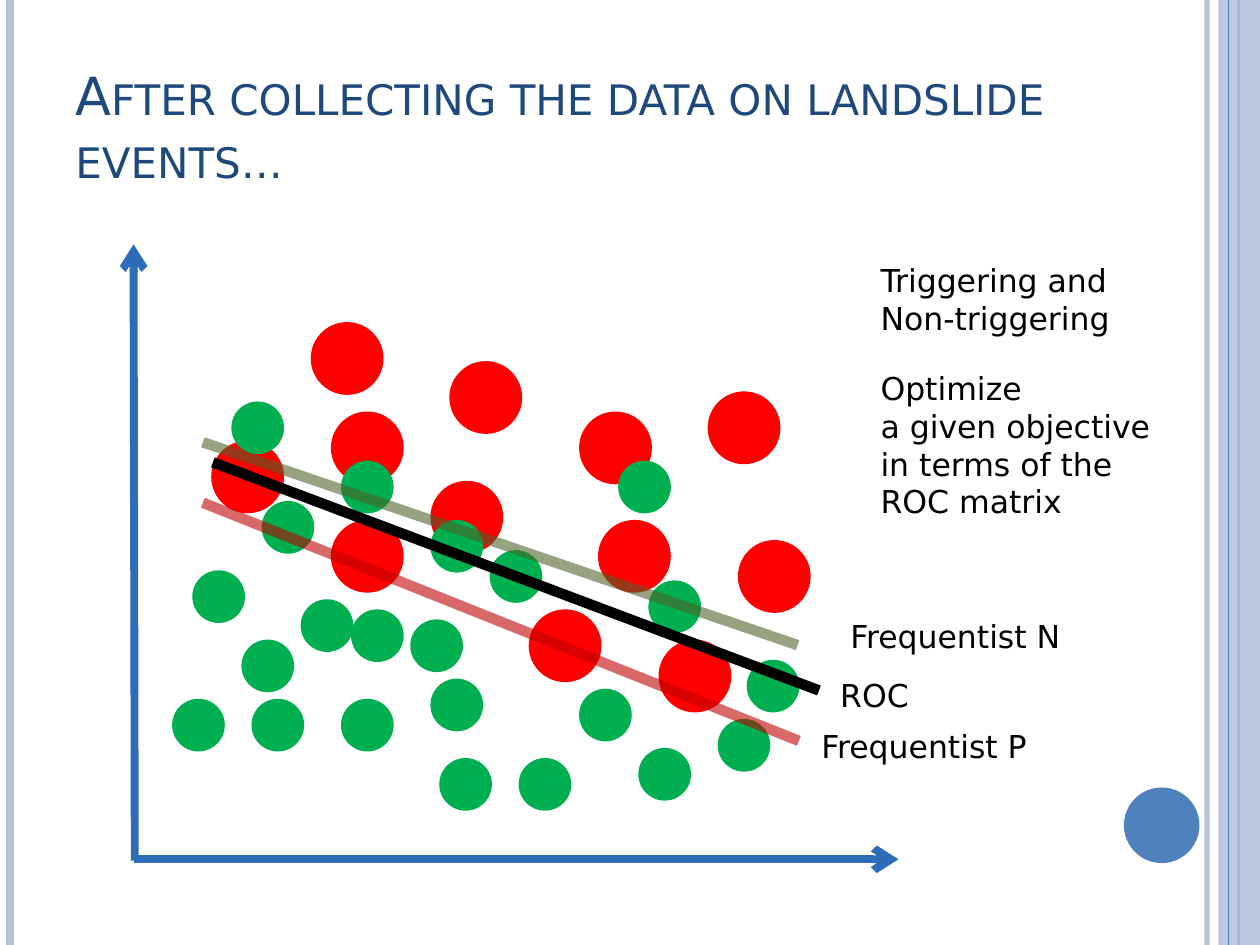
"""Build a slide on separating triggering from non-triggering landslide events."""
from lxml.etree import SubElement as Sub
from pptx import Presentation
from pptx.dml.color import RGBColor as RGB
from pptx.enum.shapes import MSO_CONNECTOR as Link, MSO_SHAPE as Shape
from pptx.enum.text import MSO_ANCHOR as Anchor
from pptx.oxml.ns import qn
from pptx.util import Inches, Pt

PALE = RGB(0xB3, 0xC1, 0xDB)
BLUE = RGB(0x4F, 0x81, 0xBD)
NAVY = RGB(0x1F, 0x49, 0x7D)
AXIS = RGB(0x2C, 0x6C, 0xB9)
RED = RGB(0xFF, 0x00, 0x00)
GREEN = RGB(0x00, 0xB0, 0x50)
OLIVE = RGB(0x4F, 0x62, 0x28)
WINE = RGB(0xC0, 0x00, 0x00)
BLACK = RGB(0x00, 0x00, 0x00)

RULES = [(9.58, PALE, 3, 93), (0.08, PALE, 4.5, 100), (9.83, BLUE, 1.5, 100)]
REDS = [
    (3.58, 2.88), (1.69, 3.51), (2.48, 2.57), (2.64, 3.28), (4.21, 4.85), (5.63, 3.12),
    (3.43, 3.83), (4.76, 4.14), (2.64, 4.14), (5.24, 5.09), (4.61, 3.28), (5.87, 4.3),
]
GREENS = [
    (2.09, 3.99), (2.72, 3.67), (2.8, 4.85), (1.54, 4.54), (3.43, 5.4), (1.93, 5.09),
    (4.13, 6.03), (5.08, 5.95), (4.61, 5.48), (2.72, 5.56), (3.5, 6.03), (1.38, 5.56),
    (2.01, 5.56), (2.4, 4.77), (5.16, 4.62), (3.9, 4.38), (1.85, 3.2), (4.92, 3.67),
    (5.94, 5.25), (3.27, 4.93), (3.43, 4.14), (5.71, 5.72),
]
FITS = [
    ((1.61, 3.51), (6.33, 5.12), OLIVE, 59),
    ((1.61, 3.99), (6.34, 5.88), WINE, 59),
    ((1.69, 3.67), (6.5, 5.48), BLACK, 100),
]
NOTES = [
    (6.89, 2.88, 1.31, ["Optimize", "a given objective", "in terms of the", "ROC matrix"]),
    (6.89, 2.02, 0.71, ["Triggering and", "Non-triggering"]),
    (6.65, 4.85, 0.4, ["Frequentist N"]),
    (6.42, 5.72, 0.4, ["Frequentist P"]),
    (6.57, 5.32, 0.4, ["ROC"]),
]


class Pen:
    face = "DejaVu Sans"

    def __init__(self, slide):
        self.slide = slide

    def fade(self, fill, alpha):
        if alpha < 100:
            for tint in fill.iter(qn("a:srgbClr")):
                Sub(tint, qn("a:alpha"), val=str(alpha * 1000))

    def line(self, start, end, color, width, alpha=100, arrow=False):
        ends = [Inches(n) for n in (*start, *end)]
        link = self.slide.shapes.add_connector(Link.STRAIGHT, *ends)
        link.line.color.rgb = color
        link.line.width = Pt(width)
        props = link._element.spPr
        self.fade(props, alpha)
        if arrow:
            Sub(props.find(qn("a:ln")), qn("a:tailEnd"), type="arrow")
        Sub(props, qn("a:effectLst"))

    def shape(self, kind, box, color, edge=0, alpha=100):
        item = self.slide.shapes.add_shape(kind, *[Inches(n) for n in box])
        item.shadow.inherit = False
        item.fill.solid()
        item.fill.fore_color.rgb = color
        self.fade(item._element.spPr, alpha)
        if edge:
            item.line.color.rgb = color
            item.line.width = Pt(edge)
        else:
            item.line.fill.background()

    def dots(self, spots, size, color):
        for x, y in spots:
            self.shape(Shape.OVAL, (x, y, size, size), color, 2)

    def text(self, box, rows, size=18, color=BLACK, anchor=Anchor.TOP, caps="none"):
        frame = self.slide.shapes.add_textbox(*[Inches(n) for n in box]).text_frame
        frame.word_wrap = True
        frame.vertical_anchor = anchor
        frame.text = "\n".join(rows)
        for para in frame.paragraphs:
            font = para.font
            font.name = self.face
            font.size = Pt(size)
            font.color.rgb = color
            font._element.set("cap", caps)


def main():
    deck = Presentation()
    deck.slide_width, deck.slide_height = Inches(10), Inches(7.5)
    pen = Pen(deck.slides.add_slide(deck.slide_layouts[6]))

    for x, color, width, alpha in RULES:
        pen.line((x, 0), (x, 7.5), color, width, alpha)
    pen.shape(Shape.RECTANGLE, (9.67, 0, 0.33, 7.5), PALE, alpha=87)
    pen.line((9.75, 0), (9.75, 7.5), BLUE, 0.75)
    pen.shape(Shape.OVAL, (8.92, 6.25, 0.6, 0.6), BLUE)

    title = ["After collecting the data on landslide events…"]
    pen.text((0.5, 0.3, 8.17, 1.25), title, 30, NAVY, Anchor.BOTTOM, "small")

    pen.line((1.06, 6.82), (7.13, 6.82), AXIS, 4.5, arrow=True)
    pen.line((1.07, 6.83), (1.06, 1.94), AXIS, 4.5, arrow=True)
    pen.dots(REDS, 0.55, RED)
    pen.dots(GREENS, 0.39, GREEN)
    for start, end, color, alpha in FITS:
        pen.line(start, end, color, 6, alpha)
    for x, y, high, rows in NOTES:
        pen.text((x, y, 2.36, high), rows)

    deck.save("out.pptx")


if __name__ == "__main__":
    main()
